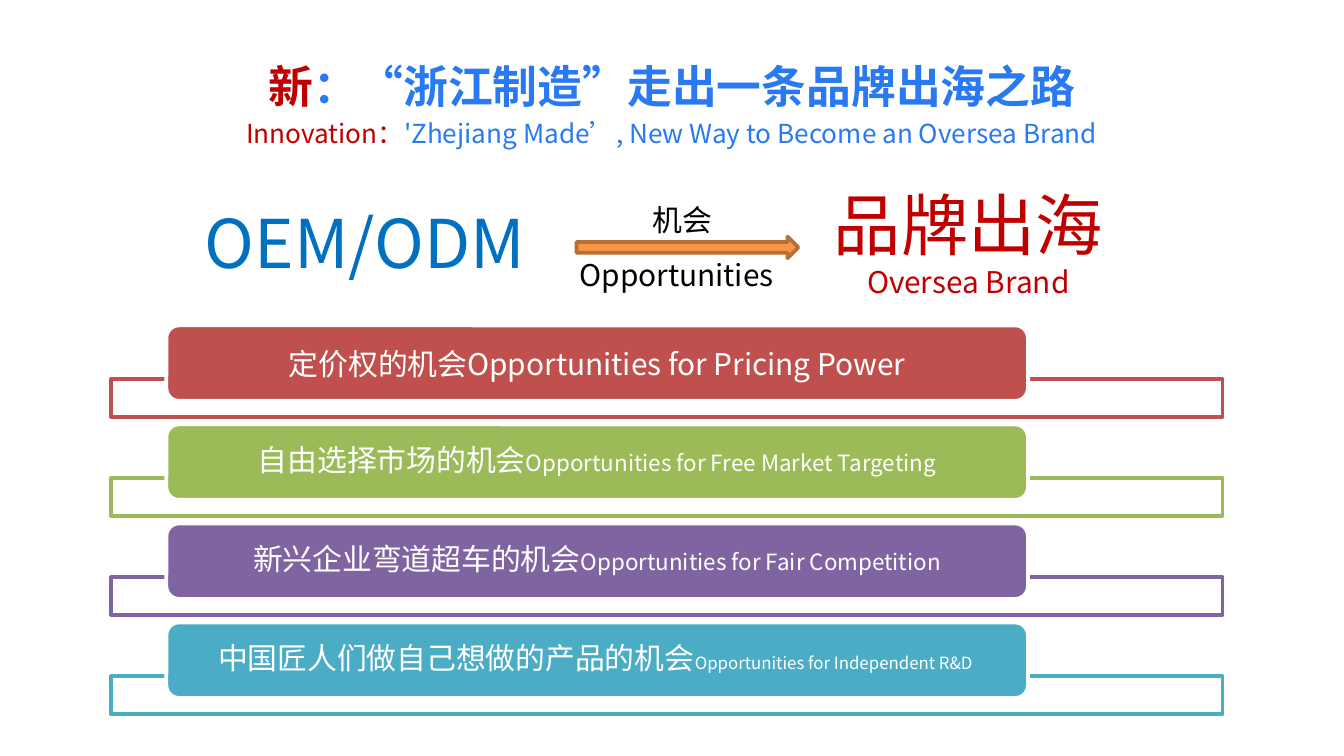
from lxml import etree
from pptx import Presentation
from pptx import util as u
from pptx.dml.color import RGBColor
from pptx.enum import shapes, text
from pptx.oxml import ns

WIDE = u.Inches(10)
HIGH = WIDE * 9 // 16
FACE = "Noto Sans CJK SC"
WHITE = RGBColor(0xFF, 0xFF, 0xFF)
BLACK = RGBColor(0, 0, 0)
RED = RGBColor(0xC0, 0, 0)
BLUE = RGBColor(0x00, 0x70, 0xC0)
SKY = RGBColor(0x28, 0x79, 0xF2)
AMBER = RGBColor(0xF7, 0x96, 0x46)
RUST = RGBColor(0xB7, 0x6F, 0x34)
BRICK = RGBColor(0xC0, 0x50, 0x4D)
GREEN = RGBColor(0x9B, 0xBB, 0x59)
PLUM = RGBColor(0x80, 0x64, 0xA2)
TEAL = RGBColor(0x4B, 0xAC, 0xC6)

TOP, STEP = 43.05, 13.1
ROWS = [
    (BRICK, 1.0, [("定价权的机会Opportunities for Pricing Power", 16)]),
    (GREEN, 0.9, [("自由选择市场的机会", 16),
                  ("Opportunities for Free Market Targeting", 12)]),
    (PLUM, 0.9, [("新兴企业弯道超车的机会", 16),
                 ("Opportunities for Fair Competition", 12)]),
    (TEAL, 0.9, [("中国匠人们做自己想做的产品的机会", 16),
                 ("Opportunities for Independent R&D ", 9)]),
]
GROW = {"auto_size": text.MSO_AUTO_SIZE.SHAPE_TO_FIT_TEXT}
MID = {"vertical_anchor": text.MSO_ANCHOR.MIDDLE}
PAD = {"margin_left": u.Inches(0.22), "margin_right": u.Inches(0.22),
       "margin_top": 0, "margin_bottom": 0}


def place(x, y, w, h):
    return [round(size * part / 100)
            for size, part in zip((WIDE, HIGH) * 2, (x, y, w, h))]


def style(item, form):
    for key, value in form.items():
        setattr(item, key, value)


def add_run(para, words, size, tint, bold=False):
    run = para.add_run()
    run.text = words
    style(run.font, {"name": FACE, "size": u.Pt(size), "bold": bold})
    run.font.color.rgb = tint
    east = etree.SubElement(run.font._element, ns.qn("a:ea"))
    east.set("typeface", FACE)


def write(frame, lines, form, space=1.0):
    style(frame, {"word_wrap": True, **form})
    for n, line in enumerate(lines):
        para = frame.paragraphs[0] if n == 0 else frame.add_paragraph()
        style(para, {"alignment": text.PP_ALIGN.CENTER, "line_spacing": space})
        for run in line:
            add_run(para, *run)


def add_text(slide, spot, lines, form):
    box = slide.shapes.add_textbox(*place(*spot))
    write(box.text_frame, lines, form)


def add_form(slide, kind, spot, fill, edge):
    form = slide.shapes.add_shape(kind, *place(*spot))
    form.shadow.inherit = False
    form.fill.solid()
    form.fill.fore_color.rgb = fill
    form.line.color.rgb = edge
    form.line.width = u.Pt(2)
    return form


def add_row(slide, top, tint, space, parts):
    kind = shapes.MSO_SHAPE
    add_form(slide, kind.RECTANGLE, (8.27, top + 7.11, 82.7, 4.98), WHITE, tint)
    bar = add_form(slide, kind.ROUNDED_RECTANGLE, (12.38, top, 64.1, 9.98),
                   tint, WHITE)
    line = [(words, size, WHITE) for words, size in parts]
    write(bar.text_frame, [line], {**MID, **PAD}, space)


def main():
    deck = Presentation()
    style(deck, {"slide_width": WIDE, "slide_height": HIGH})
    slide = deck.slides.add_slide(deck.slide_layouts[6])

    for n, row in enumerate(ROWS):
        add_row(slide, TOP + n * STEP, *row)

    add_text(slide, (11.4, 25.8, 31.5, 12.63), [[("OEM/ODM", 36, BLUE)]], GROW)
    add_text(slide, (56.3, 23.35, 31.5, 17.44),
             [[("品牌出海", 36, RED)], [("Oversea Brand", 16, RED)]], GROW)
    add_form(slide, shapes.MSO_SHAPE.RIGHT_ARROW, (42.9, 31.3, 16.5, 2.85),
             AMBER, RUST)
    add_text(slide, (44.5, 25.75, 12.6, 6.58), [[("机会", 16, BLACK)]], GROW)
    add_text(slide, (7.45, 5.52, 85.1, 11.57),
             [[("新", 24, RED, True),
               ("：“浙江制造”走出一条品牌出海之路", 24, SKY, True)]], MID)
    add_text(slide, (7.45, 11.78, 85.1, 11.57),
             [[("Innovation：", 14, RED),
               ("'Zhejiang Made’, New Way to Become an Oversea Brand", 14, SKY)]],
             MID)
    add_text(slide, (40.7, 33.1, 19.3, 6.58),
             [[("Opportunities", 16, BLACK)]], GROW)
    deck.save("out.pptx")


if __name__ == "__main__":
    main()
